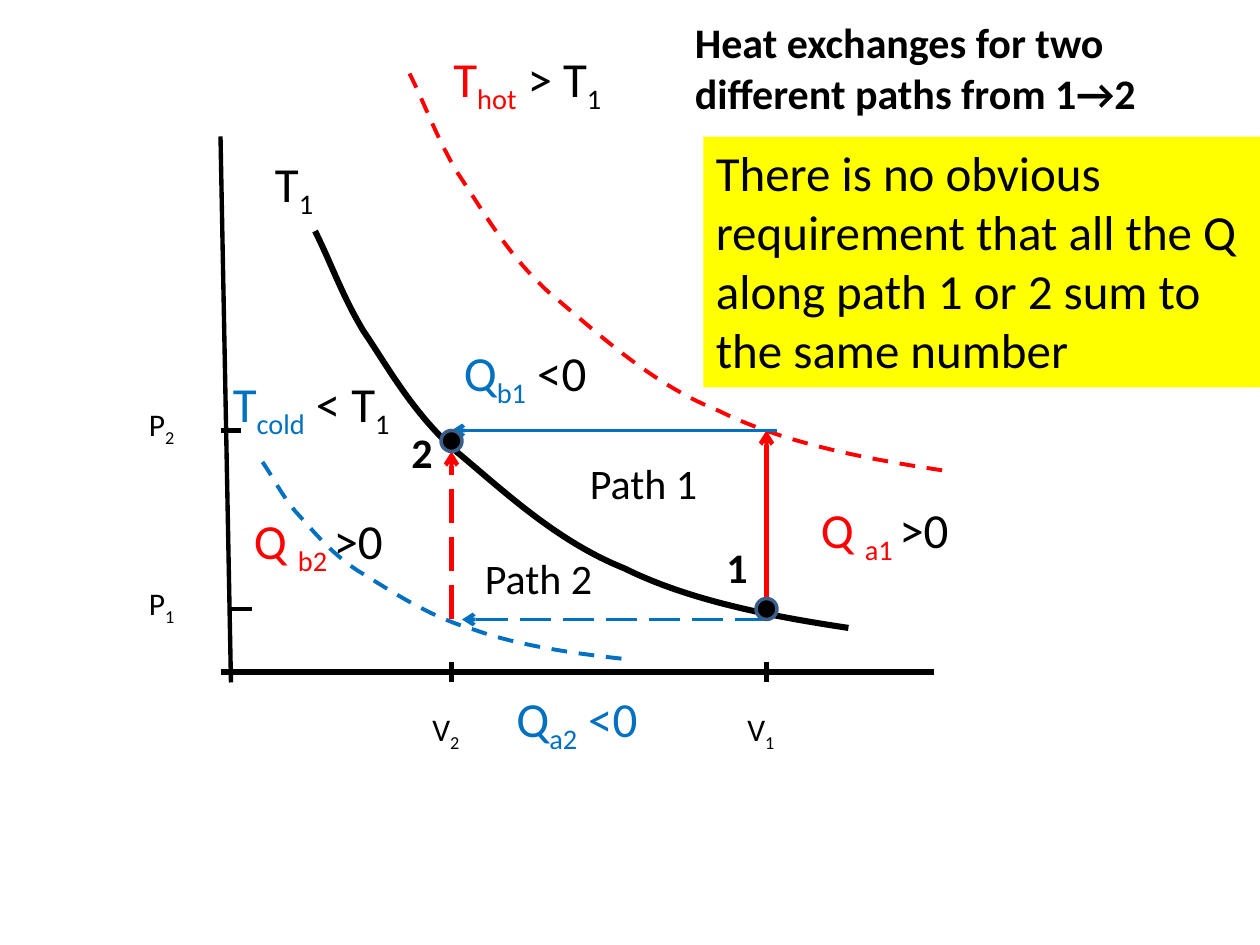
"""Build a pressure-volume slide comparing the heat exchanged along two paths."""
from collections import namedtuple

from lxml import etree
from pptx import Presentation
from pptx import util as u
from pptx.dml.color import RGBColor
from pptx.enum import dml, shapes, text
from pptx.oxml.ns import qn

CELL = u.Inches(1 / 12)
COLOURS = {"ink": "000000", "hot": "FF0000", "cold": "0070C0",
           "rim": "3A5F8C", "note": "FFFF00"}
DASHES = {"solid": dml.MSO_LINE.SOLID, "dash": dml.MSO_LINE.DASH,
          "long": dml.MSO_LINE.LONG_DASH}
ISOTHERM = [(0, 0), (.03, .08), (.05, .16), (.09, .25), (.14, .35), (.18, .45),
            (.26, .55), (.35, .65), (.45, .78), (.58, .85), (.70, .93),
            (.85, .97), (1, 1)]
Box = namedtuple("Box", "left top width height")


def colour(name):
    """Return the named colour."""
    return RGBColor.from_string(COLOURS[name])


def cells(*counts):
    """Turn counts of grid cells into lengths."""
    return [u.Emu(round(count * CELL)) for count in counts]


def inside(box, left, top, width, height):
    """Return a box whose corner is measured from the corner of another."""
    return Box(box.left + left, box.top + top, width, height)


def set_line(shape, name, weight, dash="solid"):
    """Give a shape its outline."""
    shape.line.color.rgb = colour(name)
    for key, value in {"width": u.Pt(weight), "dash_style": DASHES[dash]}.items():
        setattr(shape.line, key, value)


def add_line(page, box, ends, name, weight, dash="solid", arrow=False):
    """Draw a straight line, with an arrowhead at its end if wanted."""
    x1, y1, x2, y2 = ends
    line = page.shapes.add_connector(
        shapes.MSO_CONNECTOR.STRAIGHT,
        *cells(box.left + x1, box.top + y1, box.left + x2, box.top + y2))
    set_line(line, name, weight, dash)
    if arrow:
        etree.SubElement(line.line._get_or_add_ln(), qn("a:tailEnd"), type="arrow")
    etree.SubElement(line._element.spPr, qn("a:effectLst"))


def add_isotherm(page, box, name, weight, dash):
    """Draw an isotherm that fills the box with smooth Bézier segments."""
    points = [cells(box.left + x * box.width, box.top + y * box.height)
              for x, y in ISOTHERM]
    builder = page.shapes.build_freeform(*points[0])
    builder.add_line_segments(points[1:], close=False)
    curve = builder.convert_to_shape()
    curve.shadow.inherit = False
    curve.fill.background()
    set_line(curve, name, weight, dash)
    steps = list(curve._element.iter(qn("a:lnTo")))
    for first in range(0, len(steps), 3):
        bezier, *others = steps[first:first + 3]
        smooth = etree.SubElement(bezier.getparent(), qn("a:cubicBezTo"))
        for step in (bezier, *others):
            smooth.append(step[0])
            step.getparent().remove(step)


def write(shape, words, size, name="ink", rest="ink", bold=False):
    """Fill a shape with text, in which underscores enclose subscripts."""
    frame = shape.text_frame
    frame.word_wrap = True
    para = frame.paragraphs[0]
    para.alignment = text.PP_ALIGN.LEFT
    for index, part in enumerate(words.split("_")):
        if part:
            span = para.add_run()
            span.text = part
            look = {"name": "Calibri", "size": u.Pt(size), "bold": bold}
            for key, value in look.items():
                setattr(span.font, key, value)
            span.font.color.rgb = colour(name if index < 2 else rest)
            if index % 2:
                span._r.get_or_add_rPr().set("baseline", "-25000")


def add_label(page, box, words, size, **look):
    """Place a text box."""
    write(page.shapes.add_textbox(*cells(*box)), words, size, **look)


def add_shape(page, kind, box, fill):
    """Place a filled preset shape without an outline."""
    shape = page.shapes.add_shape(kind, *cells(*box))
    shape.shadow.inherit = False
    shape.fill.solid()
    shape.fill.fore_color.rgb = colour(fill)
    shape.line.fill.background()
    return shape


def draw_axes(page, box):
    """Draw the pressure and volume axes, their ticks and tick names."""
    add_line(page, box, (8, 9, 9, 61), "ink", 2.5)
    add_line(page, box, (8, 60, 76, 60), "ink", 3)
    for ends in ((60, 59, 60, 61), (30, 59, 30, 61), (11, 54, 9, 54), (8, 37, 10, 37)):
        add_line(page, box, ends, "ink", 2.5)
    for words, left, top in (("P_2_", 0, 34), ("P_1_", 0, 51),
                             ("V_2_", 27, 63), ("V_1_", 57, 63)):
        add_label(page, inside(box, left, top, 6, 4.8), words, 18)


def draw_paths(page, box):
    """Draw the isotherms, the arrows of both paths and the end states."""
    for place, name, weight, dash in (
            ((17, 18, 50.8, 37.8), "ink", 3.5, "solid"),
            ((26, 3, 50.8, 37.8), "hot", 2.25, "dash"),
            ((12, 40, 34.8, 18.8), "cold", 2.25, "dash")):
        add_isotherm(page, inside(box, *place), name, weight, dash)
    for ends, name, weight, dash in (
            ((60, 55, 60, 37), "hot", 2.5, "solid"),
            ((61, 37, 30, 37), "cold", 2.25, "solid"),
            ((60, 55, 31, 55), "cold", 2.25, "long"),
            ((30, 55, 30, 39), "hot", 2.5, "long")):
        add_line(page, box, ends, name, weight, dash, arrow=True)
    for left, top in ((59, 53), (29, 37)):
        state = add_shape(page, shapes.MSO_SHAPE.OVAL, inside(box, left, top, 2, 2), "ink")
        set_line(state, "rim", 2)


def draw_labels(page, box):
    """Name the temperatures, heats, paths and end states."""
    for words, left, top, width, name, rest in (
            ("T_1_", 12, 10, 9, "ink", "ink"),
            ("T_hot_ > T_1_", 29, 0, 25, "hot", "ink"),
            ("T_cold_ < T_1_", 8, 31, 25, "cold", "ink"),
            ("Q _a1 _>0", 64, 43, 22, "hot", "ink"),
            ("Q_b1_ <0", 30, 28, 19, "cold", "ink"),
            ("Q_a2_ <0", 35, 61, 19, "cold", "cold"),
            ("Q _b2 _>0", 10, 44, 22, "hot", "ink")):
        add_label(page, inside(box, left, top, width, 6.8), words, 28,
                  name=name, rest=rest)
    for words, left, top, width, bold in (
            ("1", 55, 47, 3, True), ("2", 25, 36, 3, True),
            ("Path 1", 42, 39, 13, False), ("Path 2", 32, 48, 14, False)):
        add_label(page, inside(box, left, top, width, 6), words, 24, bold=bold)


def draw_heading(page, box):
    """Write the heading."""
    add_label(page, box, "Heat exchanges for two different paths from 1→2", 24, bold=True)


def draw_note(page, box):
    """Place the highlighted remark."""
    note = add_shape(page, shapes.MSO_SHAPE.RECTANGLE, box, "note")
    note.text_frame.vertical_anchor = text.MSO_ANCHOR.TOP
    write(note, "There is no obvious requirement that all the Q along path 1 or 2 "
                "sum to the same number", 28)


def main():
    """Build and save the deck."""
    deck = Presentation()
    deck.slide_width, deck.slide_height = cells(120, 90)
    page = deck.slides.add_slide(deck.slide_layouts[6])
    diagram = Box(13, 4, 76, 68)
    for draw in (draw_axes, draw_paths, draw_labels):
        draw(page, diagram)
    draw_heading(page, Box(65, 1, 52, 10.9))
    draw_note(page, Box(67, 13, 53, 23.9))
    deck.save("out.pptx")


if __name__ == "__main__":
    main()
